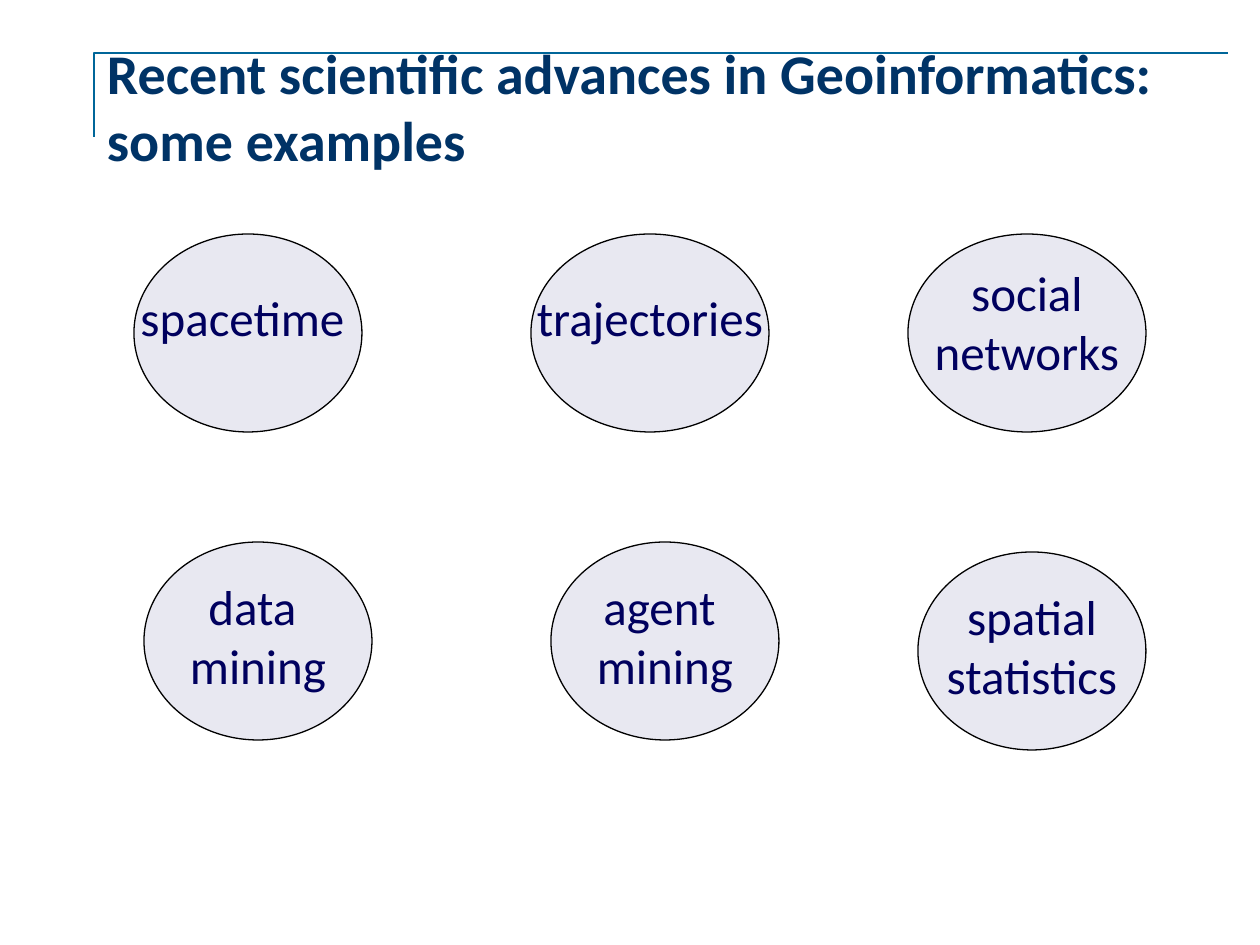
from dataclasses import dataclass

from pptx import Presentation
from pptx.dml.color import RGBColor
from pptx.enum.shapes import MSO_SHAPE
from pptx.enum.text import MSO_ANCHOR, PP_ALIGN
from pptx.util import Emu, Pt

PX = 914400 // 126


@dataclass(frozen=True)
class Theme:
    font: str = "Calibri"
    title_size: int = 32
    topic_size: int = 28
    title: str = "003366"
    rule: str = "006699"
    topic: str = "00005E"
    fill: str = "E8E8F1"
    outline: str = "000000"


THEME = Theme()


def px(n):
    return Emu(n * PX)


def rgb(code):
    return RGBColor.from_string(code)


def set_margins(tf, side, top, bottom):
    tf.margin_left = tf.margin_right = px(side)
    tf.margin_top, tf.margin_bottom = px(top), px(bottom)


def add_run(p, text, size, color, bold=False):
    r = p.add_run()
    r.text = text
    r.font.name = THEME.font
    r.font.size = Pt(size)
    r.font.bold = bold
    r.font.color.rgb = rgb(color)


def add_title(s, x, y, w, h, text):
    """Place the heading inside a corner rule that overhangs it on the right."""
    overhang, rule_h = 10, 84
    fb = s.shapes.build_freeform(x, y + rule_h, scale=PX)
    fb.add_line_segments([(x, y), (x + w + overhang, y)], close=False)
    rule = fb.convert_to_shape()
    rule.shadow.inherit = False
    rule.fill.background()
    rule.line.color.rgb = rgb(THEME.rule)
    rule.line.width = Pt(1.5)

    tf = s.shapes.add_textbox(px(x), px(y), px(w), px(h)).text_frame
    tf.word_wrap = True
    tf.vertical_anchor = MSO_ANCHOR.MIDDLE
    set_margins(tf, 13, 6, 6)
    add_run(tf.paragraphs[0], text, THEME.title_size, THEME.title, bold=True)


def add_topic(s, x, y, w, h, lines, top):
    sp = s.shapes.add_shape(MSO_SHAPE.OVAL, px(x), px(y), px(w), px(h))
    sp.shadow.inherit = False
    sp.fill.solid()
    sp.fill.fore_color.rgb = rgb(THEME.fill)
    sp.line.color.rgb = rgb(THEME.outline)
    sp.line.width = Pt(0.75)
    tf = sp.text_frame
    tf.word_wrap = False
    tf.vertical_anchor = MSO_ANCHOR.TOP
    set_margins(tf, 13, top, 0)
    for i, line in enumerate(lines):
        p = tf.paragraphs[0] if i == 0 else tf.add_paragraph()
        p.alignment = PP_ALIGN.CENTER
        add_run(p, line, THEME.topic_size, THEME.topic)


def add_topics(s, x, y, topics):
    """Place ovals given as offset x, offset y, width, top margin and lines."""
    for dx, dy, w, top, lines in topics:
        add_topic(s, x + dx, y + dy, w, 198, lines, top)


def main():
    prs = Presentation()
    prs.slide_width, prs.slide_height = px(1260), px(945)
    s = prs.slides.add_slide(prs.slide_layouts[6])
    add_title(s, 94, 53, 1124, 105,
              "Recent scientific advances in Geoinformatics: some examples")
    add_topics(s, 134, 234, [
        (0, 0, 228, 25, ["spacetime "]),
        (397, 0, 238, 25, ["trajectories"]),
        (774, 0, 238, 0, ["social", "networks"]),
        (10, 308, 228, 6, ["data ", "mining"]),
        (417, 308, 228, 6, ["agent ", "mining"]),
        (784, 318, 228, 6, ["spatial", "statistics"]),
    ])
    prs.save("out.pptx")


if __name__ == "__main__":
    main()
